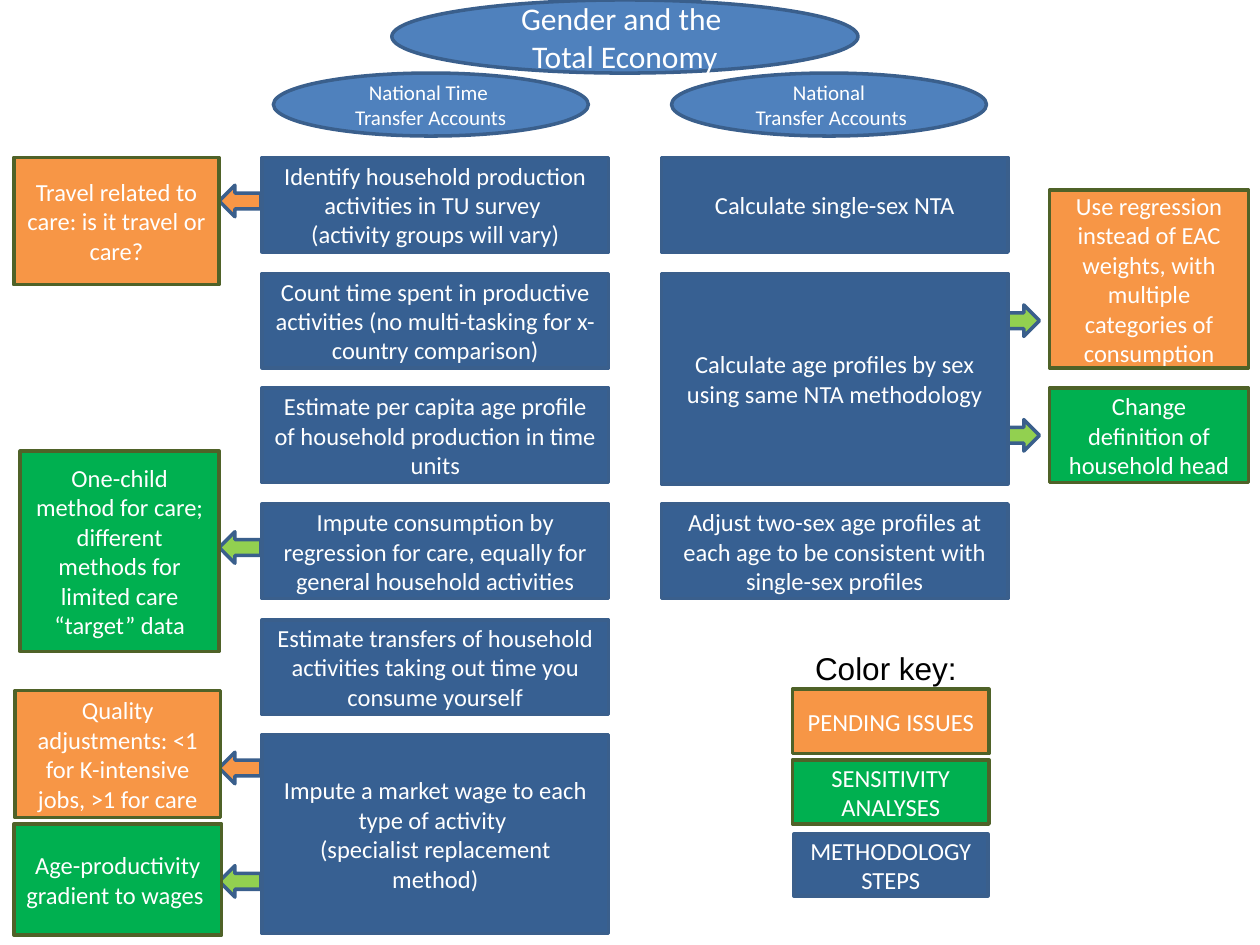
from pptx import Presentation
from pptx.dml.color import RGBColor
from pptx.enum.shapes import MSO_SHAPE
from pptx.enum.text import MSO_ANCHOR, PP_ALIGN
from pptx.util import Emu, Pt

PX = 9144
RECT, OVAL, ARROW = MSO_SHAPE.RECTANGLE, MSO_SHAPE.OVAL, MSO_SHAPE.LEFT_ARROW
CENTER, MIDDLE = PP_ALIGN.CENTER, MSO_ANCHOR.MIDDLE

WHITE = RGBColor(0xFF, 0xFF, 0xFF)
BLACK = RGBColor(0, 0, 0)
BLUE = RGBColor(0x4F, 0x81, 0xBD)
NAVY = RGBColor(0x37, 0x60, 0x92)
EDGE = RGBColor(0x3A, 0x5F, 0x8C)
OLIVE = RGBColor(0x4F, 0x62, 0x28)
ORANGE = RGBColor(0xF7, 0x96, 0x46)
GREEN = RGBColor(0x00, 0xB0, 0x50)
LIME = RGBColor(0x92, 0xD0, 0x50)

STEP_H = 75
TITLE = {"size": Pt(18), "name": "Calibri"}
SUBTITLE = {"size": Pt(12), "name": "Calibri"}
BODY = {"size": Pt(14), "name": "Calibri"}
KEY_TITLE = {"size": Pt(18), "name": "Arial"}

TIME_STEPS = [
    (0, STEP_H, ["Identify household production activities in TU survey ",
                 "(activity groups will vary)"]),
    (1, STEP_H, ["Count time spent in productive activities "
                 "(no multi-tasking for x-country comparison)"]),
    (2, STEP_H, ["Estimate per capita age profile of household production in time units"]),
    (3, STEP_H, ["Impute consumption by regression for care, "
                 "equally for general household activities"]),
    (4, STEP_H, ["Estimate transfers of household activities "
                 "taking out time you consume yourself"]),
    (5, 158, ["Impute a market wage to each type of activity ",
              "(specialist replacement method)"]),
]
NTA_STEPS = [
    (0, STEP_H, ["Calculate single-sex NTA"]),
    (1, 167, ["Calculate age profiles by sex using same NTA methodology"]),
    (3, STEP_H, ["Adjust two-sex age profiles at each age "
                 "to be consistent with single-sex profiles"]),
]
LEFT_NOTES = [
    ((0, 0, 163, 101), ORANGE, "Travel related to care: is it travel or care?"),
    ((5, 233, 158, 159), GREEN, "One-child method for care; different methods "
                                "for limited care “target” data"),
    ((1, 423, 163, 101), ORANGE, "Quality adjustments: <1 for K-intensive jobs, >1 for care"),
    ((0, 529, 165, 88), GREEN, "Age-productivity gradient to wages "),
]
LEFT_ARROWS = [(22, ORANGE), (297, LIME), (472, ORANGE), (562, LIME)]
RIGHT_NOTES = [
    ((33, 0, 158, 141), ORANGE, "Use regression instead of EAC weights, "
                                "with multiple categories of consumption"),
    ((33, 157, 158, 75), GREEN, "Change definition of household head"),
]
RIGHT_ARROWS = [(91, LIME), (182, LIME)]
KEY_ITEMS = [
    ((0, 37, 156, 51), ORANGE, OLIVE, "PENDING ISSUES"),
    ((0, 93, 156, 51), GREEN, OLIVE, "SENSITIVITY ANALYSES"),
    ((1, 152, 154, 49), NAVY, EDGE, "METHODOLOGY STEPS"),
]


def emu(*lengths):
    return [Emu(n * PX) for n in lengths]


def write(tf, lines, fmt, color, align=None):
    tf.word_wrap = True
    for i, line in enumerate(lines):
        p = tf.add_paragraph() if i else tf.paragraphs[0]
        p.alignment = align
        r = p.add_run()
        r.text = line
        r.font.color.rgb = color
        for attr, value in fmt.items():
            setattr(r.font, attr, value)


def add_box(s, kind, x, y, w, h, fill, edge, lines=(), fmt=BODY):
    sp = s.shapes.add_shape(kind, *emu(x, y, w, h))
    sp.shadow.inherit = False
    sp.fill.solid()
    sp.fill.fore_color.rgb = fill
    sp.line.color.rgb = edge
    sp.line.width = Pt(2)
    sp.text_frame.vertical_anchor = MIDDLE
    write(sp.text_frame, lines, fmt, WHITE, CENTER)
    return sp


def add_header(s, x, y):
    ovals = [
        ((94, 0, 370, 58), ["Gender and the ", "Total Economy"], TITLE),
        ((0, 58, 250, 50), ["National Time ", "Transfer Accounts"], SUBTITLE),
        ((316, 58, 250, 50), ["National", " Transfer Accounts"], SUBTITLE),
    ]
    for (dx, dy, w, h), lines, fmt in ovals:
        add_box(s, OVAL, x + dx, y + dy, w, h, BLUE, EDGE, lines, fmt)


def add_steps(s, x, y, w, steps):
    for row, h, lines in steps:
        top = y + round(row * 275 / 3)
        add_box(s, RECT, x, top, w, h, NAVY, EDGE, lines)


def add_notes(s, x, y, notes, arrows, arrow_x, arrow_w, rotation=0):
    for dy, fill in arrows:
        arrow = add_box(s, ARROW, x + arrow_x, y + dy, arrow_w, 25, fill, EDGE)
        arrow.rotation = rotation
    for (dx, dy, w, h), fill, text in notes:
        add_box(s, RECT, x + dx, y + dy, w, h, fill, OLIVE, [text])


def add_key(s, x, y):
    tb = s.shapes.add_textbox(*emu(x + 8, y, 171, 40))
    write(tb.text_frame, ["Color key:"], KEY_TITLE, BLACK)
    for (dx, dy, w, h), fill, edge, text in KEY_ITEMS:
        add_box(s, RECT, x + dx, y + dy, w, h, fill, edge, [text])


def main():
    prs = Presentation()
    prs.slide_width, prs.slide_height = emu(1000, 750)
    s = prs.slides.add_slide(prs.slide_layouts[6])
    add_header(s, 217, 0)
    add_notes(s, 11, 125, LEFT_NOTES, LEFT_ARROWS, 163, 33)
    add_notes(s, 800, 151, RIGHT_NOTES, RIGHT_ARROWS, 0, 25, 180)
    add_steps(s, 208, 125, 275, TIME_STEPS)
    add_steps(s, 525, 125, 275, NTA_STEPS)
    add_key(s, 629, 510)
    prs.save("out.pptx")


if __name__ == "__main__":
    main()
